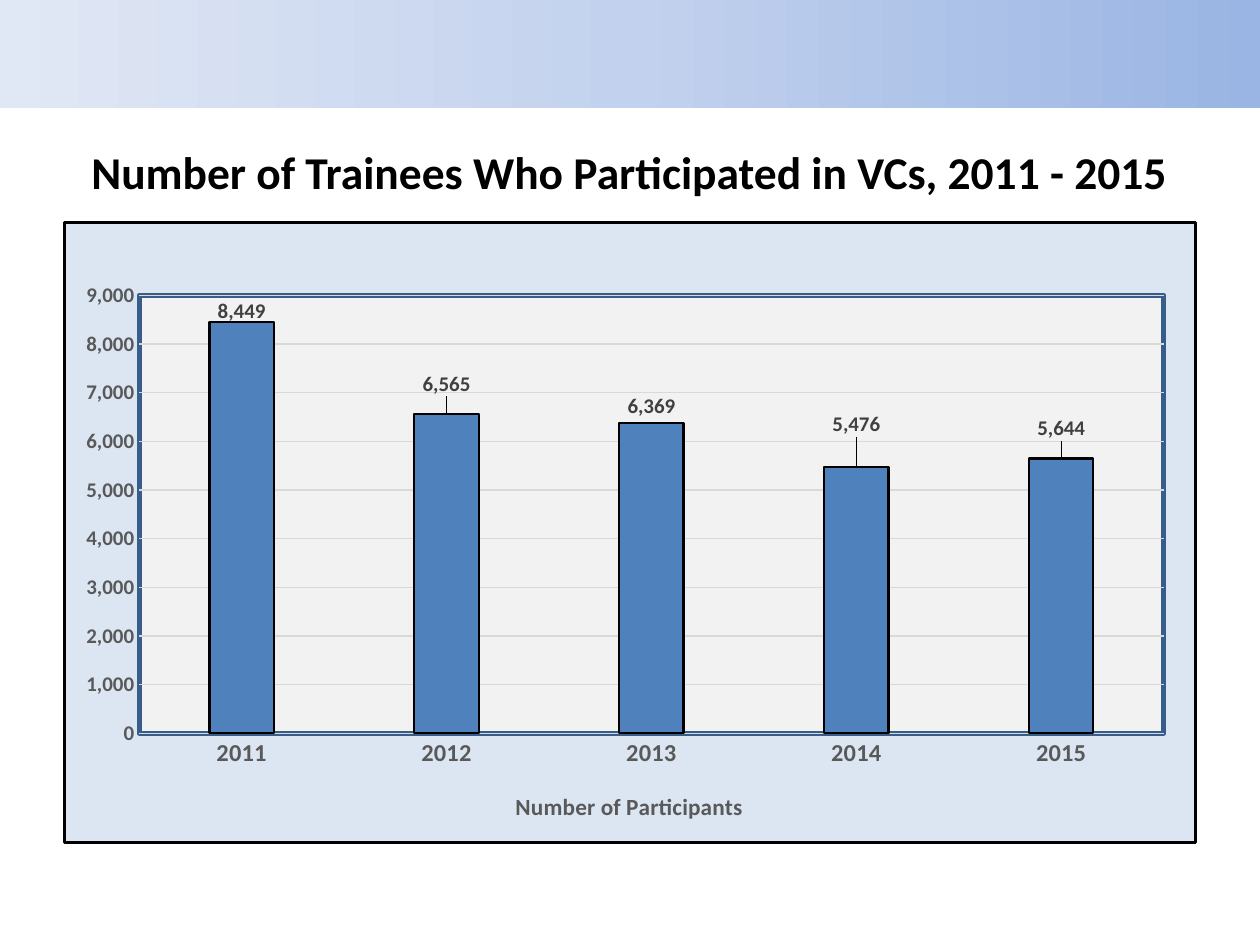
from copy import deepcopy

from pptx import Presentation
from pptx.chart.data import CategoryChartData
from pptx.dml.color import RGBColor
from pptx.enum.chart import XL_CHART_TYPE, XL_LABEL_POSITION, XL_TICK_MARK
from pptx.enum.shapes import MSO_SHAPE
from pptx.enum.text import MSO_ANCHOR, PP_ALIGN
from pptx.oxml import parse_xml
from pptx.oxml.ns import nsdecls, qn
from pptx.util import Inches, Pt

COLUMNS = XL_CHART_TYPE.COLUMN_CLUSTERED
OUTSIDE_END = XL_LABEL_POSITION.OUTSIDE_END
NO_TICK = XL_TICK_MARK.NONE
RECTANGLE = MSO_SHAPE.RECTANGLE
TOP = MSO_ANCHOR.TOP
CENTER = PP_ALIGN.CENTER

FONT = "Calibri"
COLORS = {
    "black": "000000",
    "axis text": "595959",
    "label text": "404040",
    "grid": "D9D9D9",
    "column": "4F81BD",
    "chart area": "DCE6F2",
    "plot area": "F2F2F2",
    "plot border": "385D8A",
    "band right": "9AB5E4",
    "band middle": "C2D1ED",
    "band left": "E1E8F5",
}

TRAINEES = {"2011": 8449, "2012": 6565, "2013": 6369, "2014": 5476, "2015": 5644}
# Shift of each value label, as a fraction of the chart's width and height
LABEL_SHIFTS = [(0, 0.01), (0, -0.02), (0, 0), (0, -0.04), (0, -0.02)]


def rgb(name):
    return RGBColor.from_string(COLORS[name])


def area_format(fill, line, points, compound="sng"):
    """Return a c:spPr with a solid fill and border."""
    return parse_xml(
        f'<c:spPr {nsdecls("c", "a")}>'
        f'<a:solidFill><a:srgbClr val="{COLORS[fill]}"/></a:solidFill>'
        f'<a:ln w="{Pt(points)}" cmpd="{compound}"><a:solidFill>'
        f'<a:srgbClr val="{COLORS[line]}"/></a:solidFill></a:ln></c:spPr>'
    )


def manual_layout(settings):
    """Return a c:layout from pairs of setting name and value."""
    items = "".join(f'<c:{name} val="{value}"/>' for name, value in settings.items())
    return parse_xml(
        f'<c:layout {nsdecls("c")}><c:manualLayout>{items}</c:manualLayout></c:layout>'
    )


def place(parent, layout, after=None):
    """Give parent this layout, following its child `after` or coming first."""
    old = parent.find(qn("c:layout"))
    if old is not None:
        parent.remove(old)
    if after is None:
        parent.insert(0, layout)
    else:
        parent.find(qn(after)).addnext(layout)


class SlideBuilder:
    def __init__(self, slide):
        self.slide = slide

    def style(self, font, size, color, bold=True):
        font.name, font.size, font.bold = FONT, Pt(size), bold
        font.color.rgb = rgb(color)

    def band(self, left, top, width, height, colors):
        """Add a rectangle whose three colours run from right to left."""
        band = self.slide.shapes.add_shape(
            RECTANGLE, Inches(left), Inches(top), Inches(width), Inches(height))
        band.shadow.inherit = False
        band.line.fill.background()
        band.fill.gradient()
        band.fill.gradient_angle = 180
        stop_list = band.element.spPr.find(qn("a:gradFill")).find(qn("a:gsLst"))
        stop_list.insert(1, deepcopy(stop_list[0]))
        for stop, color, position in zip(band.fill.gradient_stops, colors, (0, 0.5, 1)):
            stop.color.rgb = rgb(color)
            stop.position = position

    def title(self, text, left, top, width, height):
        title = self.slide.shapes.title
        title.left, title.top = Inches(left), Inches(top)
        title.width, title.height = Inches(width), Inches(height)
        frame = title.text_frame
        frame.text = text
        frame.vertical_anchor = TOP
        frame.margin_top = Inches(0.07)
        heading = frame.paragraphs[0]
        heading.alignment = CENTER
        self.style(heading.font, 26, "black")

    def column_chart(self, values, axis_title, left, top, width, height):
        data = CategoryChartData(number_format="#,##0")
        data.categories = list(values)
        data.add_series("Series 1", list(values.values()))
        chart = self.slide.shapes.add_chart(
            COLUMNS, Inches(left), Inches(top), Inches(width), Inches(height), data).chart
        chart.has_title = chart.has_legend = False
        self.style(chart.font, 10, "black", bold=False)

        chart_node = chart.element.find(qn("c:chart"))
        chart_node.addnext(area_format("chart area", "black", 1.75))
        plot_area = chart_node.find(qn("c:plotArea"))
        plot_area.append(area_format("plot area", "plot border", 3, "dbl"))
        place(plot_area, manual_layout({
            "layoutTarget": "inner", "xMode": "edge", "yMode": "edge",
            "x": 0.066, "y": 0.118, "w": 0.906, "h": 0.706}))

        self.axes(chart, axis_title)
        self.columns(chart.plots[0])

    def axes(self, chart, axis_title):
        years, counts = chart.category_axis, chart.value_axis
        for axis, size in ((years, 14), (counts, 12)):
            axis.major_tick_mark = axis.minor_tick_mark = NO_TICK
            self.style(axis.tick_labels.font, size, "axis text")
        years.format.line.color.rgb = rgb("grid")
        years.format.line.width = Pt(0.75)
        caption = years.axis_title.text_frame
        caption.text = axis_title
        self.style(caption.paragraphs[0].font, 13.3, "axis text")
        place(years.axis_title.element, manual_layout(
            {"xMode": "edge", "yMode": "edge", "x": 0.395, "y": 0.91}), "c:tx")

        counts.minimum_scale, counts.maximum_scale, counts.major_unit = 0, 9000, 1000
        counts.tick_labels.number_format = "#,##0"
        counts.tick_labels.number_format_is_linked = False
        counts.format.line.fill.background()
        grid_line = counts.major_gridlines.format.line
        grid_line.color.rgb = rgb("grid")
        grid_line.width = Pt(0.75)

    def columns(self, plot):
        plot.gap_width, plot.overlap = 219, -27
        plot.vary_by_categories = False
        series = plot.series[0]
        series.format.fill.solid()
        series.format.fill.fore_color.rgb = rgb("column")
        series.format.line.color.rgb = rgb("black")
        series.format.line.width = Pt(1.25)

        labels = series.data_labels
        labels.show_value = True
        labels.position = OUTSIDE_END
        self.style(labels.font, 12, "label text")
        for index, (x, y) in enumerate(LABEL_SHIFTS):
            label = series.points[index].data_label
            self.style(label.font, 12, "label text")
            label.position = OUTSIDE_END
        for node, (x, y) in zip(labels._element.findall(qn("c:dLbl")), LABEL_SHIFTS):
            place(node, manual_layout({"x": x, "y": y}), "c:idx")


def main():
    deck = Presentation()
    deck.slide_width, deck.slide_height = Inches(10), Inches(7.5)
    builder = SlideBuilder(deck.slides.add_slide(deck.slide_layouts[5]))
    builder.band(0, -0.02, 10, 0.88, ("band right", "band middle", "band left"))
    builder.title("Number of Trainees Who Participated in VCs, 2011 - 2015", 0.5, 1.07, 9, 0.48)
    builder.column_chart(TRAINEES, "Number of Participants", 0.5, 1.75, 9, 4.95)
    deck.save("out.pptx")


if __name__ == "__main__":
    main()
